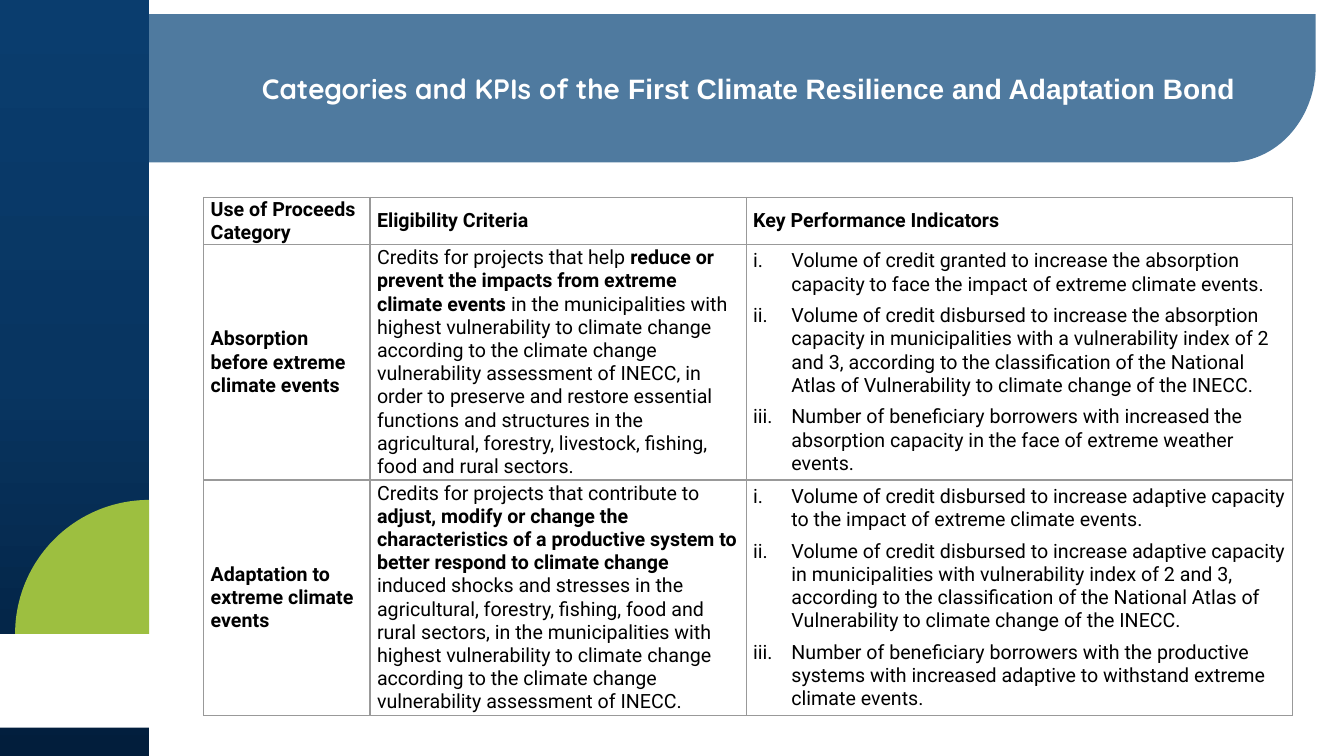
"""Build a slide on the categories and KPIs of a climate resilience bond."""
import math
from copy import deepcopy

from pptx import Presentation
from pptx.dml.color import RGBColor
from pptx.enum.shapes import MSO_SHAPE
from pptx.enum.text import MSO_ANCHOR, PP_ALIGN
from pptx.oxml.ns import qn
from pptx.util import Inches, Pt
from lxml import etree

RECTANGLE = MSO_SHAPE.RECTANGLE
MIDDLE = MSO_ANCHOR.MIDDLE
LEFT, CENTER = PP_ALIGN.LEFT, PP_ALIGN.CENTER

WHITE = RGBColor(0xFF, 0xFF, 0xFF)
BLACK = RGBColor(0x00, 0x00, 0x00)
BANNER_BLUE = RGBColor(0x4F, 0x7A, 0x9F)
GREEN = RGBColor(0x9D, 0xBF, 0x40)
BORDER_GREY = RGBColor(0x99, 0x99, 0x99)
SIDEBAR_STOPS = [
    (0, RGBColor(0x0A, 0x3D, 0x6E)),
    (0.5, RGBColor(0x08, 0x35, 0x61)),
    (1, RGBColor(0x02, 0x1E, 0x3C)),
]

SIDEBAR_W = 1.48
HEADING_FONT, BODY_FONT = "Quicksand", "Roboto"
BOLD = {"bold": True}
COLUMN_WIDTHS = [1.65, 3.73, 5.42]
ROW_HEIGHTS = [0.46, 2.3, 2.3]

TITLE = [[
    ("Categories and KPIs of the ", {}),
    ("First Climate Resilience and Adaptation Bond", {"font": "Arial"}),
]]
HEADERS = [
    ["Use of Proceeds", "Category"],
    ["Eligibility Criteria"],
    ["Key Performance Indicators"],
]
CATEGORIES = [
    (
        "Absorption before extreme climate events",
        [
            ("Credits for projects that help ", {}),
            ("reduce or prevent the impacts from extreme climate events", BOLD),
            (" in the municipalities with highest vulnerability to climate change "
             "according to the climate change vulnerability assessment of INECC, in "
             "order to preserve and restore essential functions and structures in the "
             "agricultural, forestry, livestock, fishing, food and rural sectors.", {}),
        ],
        [
            "Volume of credit granted to increase the absorption capacity to face the "
            "impact of extreme climate events.",
            "Volume of credit disbursed to increase the absorption capacity in "
            "municipalities with a vulnerability index of 2 and 3, according to the "
            "classification of the National Atlas of Vulnerability to climate change "
            "of the INECC.",
            "Number of beneficiary borrowers with increased the absorption capacity in "
            "the face of extreme weather events.",
        ],
    ),
    (
        "Adaptation to extreme climate events",
        [
            ("Credits for projects that contribute to ", {}),
            ("adjust, modify or change the characteristics of a productive system to "
             "better respond to climate change ", BOLD),
            ("induced shocks and stresses in the agricultural, forestry, fishing, food "
             "and rural sectors, in the municipalities with highest vulnerability to "
             "climate change according to the climate change vulnerability assessment "
             "of INECC.", {}),
        ],
        [
            "Volume of credit disbursed to increase adaptive capacity to the impact of "
            "extreme climate events.",
            "Volume of credit disbursed to increase adaptive capacity in "
            "municipalities with vulnerability index of 2 and 3, according to the "
            "classification of the National Atlas of Vulnerability to climate change "
            "of the INECC.",
            "Number of beneficiary borrowers with the productive systems with increased "
            "adaptive to withstand extreme climate events.",
        ],
    ),
]


def number_paragraph(p):
    """Give a paragraph a hanging lower-case roman number."""
    pPr = p._p.get_or_add_pPr()
    pPr.set("marL", str(Inches(0.38)))
    pPr.set("indent", str(-Inches(0.38)))
    etree.SubElement(pPr, qn("a:buFont"), typeface="+mj-lt")
    etree.SubElement(pPr, qn("a:buAutoNum"), type="romanLcPeriod")


def write_text(tf, paragraphs, size=14, font=BODY_FONT, color=BLACK, bold=False,
               align=LEFT, after=0, numbered=False):
    """Fill a text frame with paragraphs, each a string or a list of runs."""
    tf.word_wrap = True
    for i, runs in enumerate(paragraphs):
        p = tf.paragraphs[0] if i == 0 else tf.add_paragraph()
        p.alignment = align
        p.space_after = Pt(after)
        if numbered:
            number_paragraph(p)
        for text, changes in [(runs, {})] if isinstance(runs, str) else runs:
            r = p.add_run()
            r.text = text
            r.font.size = Pt(size)
            r.font.name = changes.get("font", font)
            r.font.bold = changes.get("bold", bold)
            r.font.color.rgb = color


def style_shape(sp, color):
    """Give a shape a plain fill without line or shadow."""
    sp.shadow.inherit = False
    sp.line.fill.background()
    sp.fill.solid()
    sp.fill.fore_color.rgb = color


def add_rectangle(s, x, y, w, h, color=WHITE):
    """Add a plain rectangle."""
    sp = s.shapes.add_shape(RECTANGLE, Inches(x), Inches(y), Inches(w), Inches(h))
    style_shape(sp, color)
    return sp


def add_gradient(sp, stops):
    """Fill a shape with a three-stop gradient from top to bottom."""
    sp.fill.gradient()
    sp.fill.gradient_angle = 270
    stop_list = next(sp._element.iter(qn("a:gsLst")))
    stop_list.insert(1, deepcopy(stop_list[0]))
    for stop, (position, color) in zip(sp.fill.gradient_stops, stops):
        stop.position = position
        stop.color.rgb = color


def quarter_arc(cx, cy, rx, ry, start, steps=45):
    """Return points along a quarter of an ellipse, clockwise from start degrees."""
    angles = [math.radians(start + 90 * i / steps) for i in range(steps + 1)]
    return [(cx + rx * math.cos(a), cy + ry * math.sin(a)) for a in angles]


def add_outline(s, points, color):
    """Add a closed filled outline through the points."""
    first, *rest = [(Inches(x), Inches(y)) for x, y in points]
    builder = s.shapes.build_freeform(*first)
    builder.add_line_segments(rest, close=True)
    style_shape(builder.convert_to_shape(), color)


def add_borders(cell):
    """Draw a thin grey line on each side of a table cell."""
    tcPr = cell._tc.get_or_add_tcPr()
    for side in ("lnL", "lnR", "lnT", "lnB"):
        ln = etree.SubElement(tcPr, qn(f"a:{side}"), w=str(Pt(1)))
        fill = etree.SubElement(ln, qn("a:solidFill"))
        etree.SubElement(fill, qn("a:srgbClr"), val=str(BORDER_GREY))


def fill_cell(cell, paragraphs, **text_format):
    """Set the frame and the text of a table cell."""
    cell.margin_left = cell.margin_right = Inches(0.07)
    cell.margin_top = cell.margin_bottom = 0
    cell.vertical_anchor = MIDDLE
    add_borders(cell)
    cell.fill.background()
    write_text(cell.text_frame, paragraphs, **text_format)


def add_kpi_table(s):
    """Add the table of categories, criteria and indicators."""
    frame = s.shapes.add_table(
        len(ROW_HEIGHTS), len(COLUMN_WIDTHS), Inches(2.02), Inches(1.96),
        Inches(sum(COLUMN_WIDTHS)), Inches(sum(ROW_HEIGHTS)))
    table = frame.table
    table.first_row = table.horz_banding = False
    for column, width in zip(table.columns, COLUMN_WIDTHS):
        column.width = Inches(width)
    for row, height in zip(table.rows, ROW_HEIGHTS):
        row.height = Inches(height)
    for i, header in enumerate(HEADERS):
        fill_cell(table.cell(0, i), header, bold=True)
    for i, (category, criteria, indicators) in enumerate(CATEGORIES, 1):
        fill_cell(table.cell(i, 0), [category], bold=True)
        fill_cell(table.cell(i, 1), [criteria], after=6)
        fill_cell(table.cell(i, 2), indicators, after=6, numbered=True)


def main():
    """Build and save the slide."""
    prs = Presentation()
    prs.slide_width, prs.slide_height = Inches(13.33), Inches(7.5)
    s = prs.slides.add_slide(prs.slide_layouts[6])
    banner = [(SIDEBAR_W, 0.14), (13.05, 0.14)]
    banner += quarter_arc(12.19, 0.65, 0.86, 0.96, 0) + [(SIDEBAR_W, 1.61)]
    add_outline(s, banner, BANNER_BLUE)
    add_gradient(add_rectangle(s, 0, 0, SIDEBAR_W, 7.5), SIDEBAR_STOPS)
    add_rectangle(s, 0, 6.29, SIDEBAR_W, 0.93)
    leaf = [(SIDEBAR_W, 6.29)] + quarter_arc(SIDEBAR_W, 6.29, 1.33, 1.33, 180)
    add_outline(s, leaf, GREEN)
    title = s.shapes.add_textbox(Inches(1.8), Inches(0.29), Inches(11.25), Inches(1.18))
    title.text_frame.vertical_anchor = MIDDLE
    write_text(title.text_frame, TITLE, size=20, font=HEADING_FONT, color=WHITE,
               bold=True, align=CENTER)
    add_kpi_table(s)
    prs.save("out.pptx")


if __name__ == "__main__":
    main()
